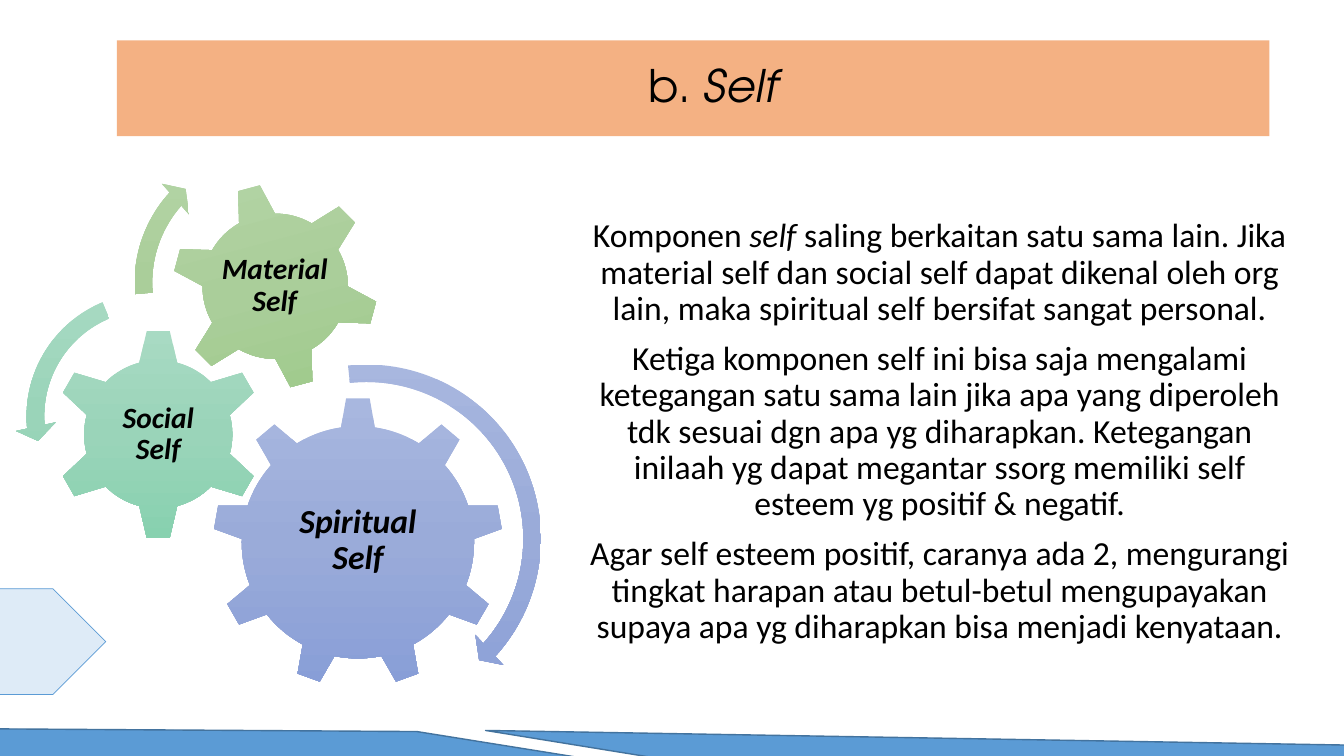
from copy import deepcopy

from pptx import Presentation
from pptx.dml.color import RGBColor
from pptx.enum.shapes import MSO_SHAPE
from pptx.enum.text import MSO_ANCHOR, MSO_AUTO_SIZE, PP_ALIGN
from pptx.oxml.ns import qn
from pptx.util import Emu, Pt

PX = 9144  # 100 px to the inch
COLORS = {
    "text": "000000", "banner": "F4B183",
    "stripe": "5B9BD5", "stripe_line": "43739E",
    "tag": "DEEBF7", "tag_line": "5B9BD5",
}
GRADIENTS = {
    "spiritual": ("A8B7DF", "9AABD9", "889ED7"),
    "social": ("A8DAC3", "9AD4B9", "87D1AF"),
    "material": ("B5D5A7", "AACE9A", "9CC987"),
}
HEADING_FONT = "TeX Gyre Adventor"
BODY_FONT = "Calibri"

# name, gear shape, box, rotation, label box, label, size
GEARS = [
    ("spiritual", MSO_SHAPE.GEAR_9, (211, 394, 288, 288), 0,
     (269, 462, 172, 148), "Spiritual Self", 24),
    ("social", MSO_SHAPE.GEAR_6, (52, 326, 210, 210), 0,
     (105, 379, 104, 104), "Social Self", 21),
    ("material", MSO_SHAPE.GEAR_6, (170, 181, 206, 206), 345,
     (215, 226, 115, 115), "Material Self", 21),
]
# name, arrow shape, box, adjustments in thousandths
ARROWS = [
    ("spiritual", MSO_SHAPE.CIRCULAR_ARROW, (179, 350, 369, 369),
     (47, 2990, 25289, 158342, 55)),
    ("social", MSO_SHAPE.LEFT_CIRCULAR_ARROW, (15, 279, 268, 268),
     (65, 4300, 104891, 148378, 75)),
    ("material", MSO_SHAPE.CIRCULAR_ARROW, (122, 136, 289, 289),
     (60, 3941, 133138, 105082, 70)),
]
STRIPES = [((-10, 725, 827, 127), 9.1), ((486, 670, 858, 124), 189.2)]

# Each paragraph is a list of (text, italic) runs
BODY = [
    [("Komponen ", False), ("self ", True),
     ("saling berkaitan satu sama lain. Jika material self dan social self "
      "dapat dikenal oleh org lain, maka spiritual self bersifat sangat "
      "personal.", False)],
    [("Ketiga komponen self ini bisa saja mengalami ketegangan satu sama lain "
      "jika apa yang diperoleh tdk sesuai dgn apa yg diharapkan. Ketegangan "
      "inilaah yg dapat megantar ssorg memiliki self esteem yg positif & "
      "negatif.", False)],
    [("Agar self esteem positif, caranya ada 2, mengurangi tingkat harapan "
      "atau betul-betul mengupayakan supaya apa yg diharapkan bisa menjadi "
      "kenyataan.", False)],
]


def emu(box):
    return [Emu(v * PX) for v in box]


def rgb(name):
    return RGBColor.from_string(COLORS[name])


class SlideBuilder:
    def __init__(self, prs):
        self.slide = prs.slides.add_slide(prs.slide_layouts[1])

    def add_text(self, tf, paragraphs, size, font, bold=False, before=0):
        tf.word_wrap = True
        tf.auto_size = MSO_AUTO_SIZE.NONE
        for i, runs in enumerate(paragraphs):
            p = tf.add_paragraph() if i else tf.paragraphs[0]
            p.alignment = PP_ALIGN.CENTER
            p.line_spacing = 0.9
            p.space_before = Pt(before)
            for text, italic in runs:
                r = p.add_run()
                r.text = text
                r.font.name = font
                r.font.size = Pt(size)
                r.font.bold = bold
                r.font.italic = italic
                r.font.color.rgb = rgb("text")

    def place(self, sp, box):
        sp.left, sp.top, sp.width, sp.height = emu(box)

    def title(self, box, runs):
        sp = self.slide.shapes.title
        self.place(sp, box)
        sp.fill.solid()
        sp.fill.fore_color.rgb = rgb("banner")
        tf = sp.text_frame
        tf.vertical_anchor = MSO_ANCHOR.MIDDLE
        tf.margin_left = Emu(50 * PX)
        self.add_text(tf, [runs], 32, HEADING_FONT)

    def body(self, box, paragraphs):
        sp = self.slide.placeholders[1]
        self.place(sp, box)
        self.add_text(sp.text_frame, paragraphs, 24, BODY_FONT, before=10)
        for p in sp.text_frame.paragraphs:
            pPr = p._p.get_or_add_pPr()
            pPr.set("marL", "0")
            pPr.set("indent", "0")
            pPr.append(pPr.makeelement(qn("a:buNone"), {}))

    def label(self, box, text, size):
        tf = self.slide.shapes.add_textbox(*emu(box)).text_frame
        tf.margin_left = tf.margin_right = Emu(3 * PX)
        tf.margin_top = tf.margin_bottom = Emu(3 * PX)
        tf.vertical_anchor = MSO_ANCHOR.MIDDLE
        self.add_text(tf, [[(text, True)]], size, BODY_FONT, bold=True)

    def shape(self, kind, box, rotation=0):
        sp = self.slide.shapes.add_shape(kind, *emu(box))
        sp.shadow.inherit = False
        sp.rotation = rotation
        return sp

    def solid(self, kind, box, fill, line, width, rotation=0):
        sp = self.shape(kind, box, rotation)
        sp.fill.solid()
        sp.fill.fore_color.rgb = rgb(fill)
        sp.line.color.rgb = rgb(line)
        sp.line.width = Pt(width)

    def shaded(self, kind, box, gradient, rotation=0, adjustments=()):
        """Add an unlined shape with a three-stop gradient running down."""
        sp = self.shape(kind, box, rotation)
        sp.line.fill.background()
        for i, value in enumerate(adjustments):
            sp.adjustments[i] = value / 1000
        sp.fill.gradient()
        sp.fill.gradient_angle = 270
        stops = sp._element.spPr.find(qn("a:gradFill")).find(qn("a:gsLst"))
        stops.insert(1, deepcopy(stops[0]))
        colors = GRADIENTS[gradient]
        for i, (stop, color) in enumerate(zip(sp.fill.gradient_stops, colors)):
            stop.position = i / 2
            stop.color.rgb = RGBColor.from_string(color)


def main():
    prs = Presentation()
    prs.slide_width, prs.slide_height = emu((1333, 750))
    s = SlideBuilder(prs)
    s.title((116, 40, 1143, 95), [("b. ", False), ("Self", True)])
    s.body((566, 212, 732, 477), BODY)
    for name, kind, box, rotation, label_box, text, size in GEARS:
        s.shaded(kind, box, name, rotation)
        s.label(label_box, text, size)
    for name, kind, box, adjustments in ARROWS:
        s.shaded(kind, box, name, adjustments=adjustments)
    for box, rotation in STRIPES:
        s.solid(MSO_SHAPE.DIAGONAL_STRIPE, box, "stripe", "stripe_line", 1,
                rotation)
    s.solid(MSO_SHAPE.PENTAGON, (-2, 584, 107, 105), "tag", "tag_line", 0.5)
    prs.save("out.pptx")


if __name__ == "__main__":
    main()
